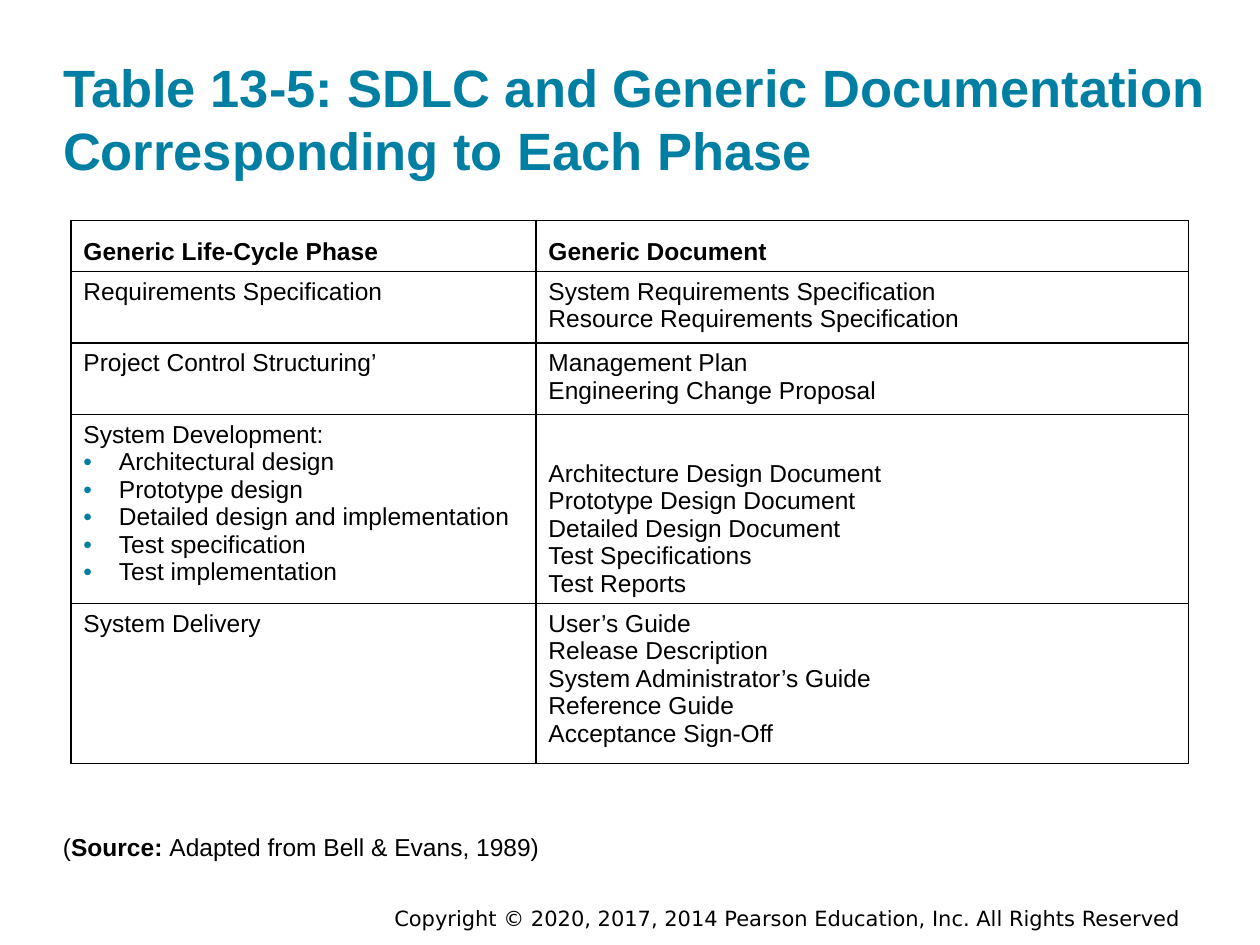
from dataclasses import dataclass

from lxml import etree
from pptx import Presentation
from pptx import util as u
from pptx.dml.color import RGBColor
from pptx.enum import text
from pptx.oxml import ns


@dataclass(frozen=True)
class Theme:
    accent: RGBColor = RGBColor(0x00, 0x7F, 0xA3)
    ink: RGBColor = RGBColor(0, 0, 0)
    font: str = "Arial"
    footer_font: str = "DejaVu Sans"
    title_size: float = 30
    body_size: float = 14
    footer_size: float = 12
    title_pitch: float = 36
    row_pitch: float = 15.7
    bullet_indent: float = 20.25
    border: float = 1


@dataclass(frozen=True)
class Box:
    left: float
    top: float
    width: float
    height: float
    inset_x: float = 0
    inset_y: float = 0
    anchor: text.MSO_ANCHOR = text.MSO_ANCHOR.TOP


@dataclass(frozen=True)
class Phase:
    name: str
    documents: tuple[str, ...]
    steps: tuple[str, ...] = ()


T = Theme()
TITLE = Box(36, 17.3, 674, 86.4, anchor=text.MSO_ANCHOR.BOTTOM)
SOURCE = Box(36, 475.2, 648, 23.8)
FOOTER = Box(218.2, 510.5, 471.6, 28.8, 7.2, 3.6, text.MSO_ANCHOR.MIDDLE)
TABLE_LEFT, TABLE_TOP = 40.5, 126
COLUMNS = (265.7, 373)
HEADER_HEIGHT = 29.2
CELL_PADDING = 7.2
HEADERS = ("Generic Life-Cycle Phase", "Generic Document")
PHASES = (
    Phase("Requirements Specification",
          ("System Requirements Specification", "Resource Requirements Specification")),
    Phase("Project Control Structuring’",
          ("Management Plan", "Engineering Change Proposal")),
    Phase("System Development:",
          ("Architecture Design Document", "Prototype Design Document",
           "Detailed Design Document", "Test Specifications", "Test Reports"),
          ("Architectural design", "Prototype design", "Detailed design and implementation",
           "Test specification", "Test implementation")),
    Phase("System Delivery",
          ("User’s Guide", "Release Description", "System Administrator’s Guide",
           "Reference Guide", "Acceptance Sign-Off")),
)


def set_font(item, size: float, color: RGBColor, bold: bool = False, name: str = T.font) -> None:
    f = item.font
    f.name, f.size, f.bold = name, u.Pt(size), bold
    f.color.rgb = color


def add_box(s, box: Box):
    sp = s.shapes.add_textbox(u.Pt(box.left), u.Pt(box.top), u.Pt(box.width), u.Pt(box.height))
    tf = sp.text_frame
    tf.word_wrap = True
    tf.vertical_anchor = box.anchor
    tf.margin_left = tf.margin_right = u.Pt(box.inset_x)
    tf.margin_top = tf.margin_bottom = u.Pt(box.inset_y)
    return tf.paragraphs[0]


def add_bullet(p) -> None:
    pr = p._p.get_or_add_pPr()
    indent = u.Pt(T.bullet_indent)
    pr.set("marL", str(indent))
    pr.set("indent", str(-indent))
    color = etree.SubElement(pr, ns.qn("a:buClr"))
    etree.SubElement(color, ns.qn("a:srgbClr"), val=str(T.accent))
    etree.SubElement(pr, ns.qn("a:buFont"), typeface=T.font)
    etree.SubElement(pr, ns.qn("a:buChar"), char="•")


def add_borders(cell) -> None:
    pr = cell._tc.get_or_add_tcPr()
    for i, edge in enumerate(("lnL", "lnR", "lnT", "lnB")):
        ln = etree.Element(ns.qn(f"a:{edge}"), w=str(u.Pt(T.border)))
        fill = etree.SubElement(ln, ns.qn("a:solidFill"))
        etree.SubElement(fill, ns.qn("a:srgbClr"), val=str(T.ink))
        pr.insert(i, ln)


def fill_cell(cell, lines: tuple[str, ...], bullets_from: int = 99,
              bold: bool = False, bottom: bool = False) -> None:
    cell.fill.background()
    add_borders(cell)
    cell.vertical_anchor = text.MSO_ANCHOR.BOTTOM if bottom else text.MSO_ANCHOR.TOP
    tf = cell.text_frame
    tf.text = "\n".join(lines)
    for i, p in enumerate(tf.paragraphs):
        if i >= bullets_from:
            add_bullet(p)
        for r in p.runs:
            set_font(r, T.body_size, T.ink, bold)


def add_phase_table(s) -> None:
    shape = s.shapes.add_table(len(PHASES) + 1, len(COLUMNS), u.Pt(TABLE_LEFT), u.Pt(TABLE_TOP),
                               u.Pt(sum(COLUMNS)), u.Pt(HEADER_HEIGHT * (len(PHASES) + 1)))
    table = shape.table
    table.horz_banding = False
    for column, width in zip(table.columns, COLUMNS):
        column.width = u.Pt(width)
    table.rows[0].height = u.Pt(HEADER_HEIGHT)
    for i, header in enumerate(HEADERS):
        fill_cell(table.cell(0, i), (header,), bold=True, bottom=True)
    for i, phase in enumerate(PHASES, 1):
        names = (phase.name, *phase.steps)
        count = max(len(names), len(phase.documents))
        table.rows[i].height = u.Pt(count * T.row_pitch + CELL_PADDING)
        fill_cell(table.cell(i, 0), names, bullets_from=1)
        fill_cell(table.cell(i, 1), phase.documents, bottom=bool(phase.steps))


def main() -> None:
    prs = Presentation()
    prs.slide_width, prs.slide_height = u.Pt(720), u.Pt(540)
    s = prs.slides.add_slide(prs.slide_layouts[6])

    p = add_box(s, FOOTER)
    p.text = "Copyright © 2020, 2017, 2014 Pearson Education, Inc. All Rights Reserved"
    set_font(p.runs[0], T.footer_size, T.ink, name=T.footer_font)

    p = add_box(s, TITLE)
    p.text = "Table 13-5: SDLC and Generic Documentation Corresponding to Each Phase"
    p.line_spacing = u.Pt(T.title_pitch)
    set_font(p.runs[0], T.title_size, T.accent, bold=True)

    add_phase_table(s)

    p = add_box(s, SOURCE)
    for part, bold in (("(", False), ("Source: ", True),
                       ("Adapted from Bell & Evans, 1989)", False)):
        r = p.add_run()
        r.text = part
        set_font(r, T.body_size, T.ink, bold)

    prs.save("out.pptx")


if __name__ == "__main__":
    main()
